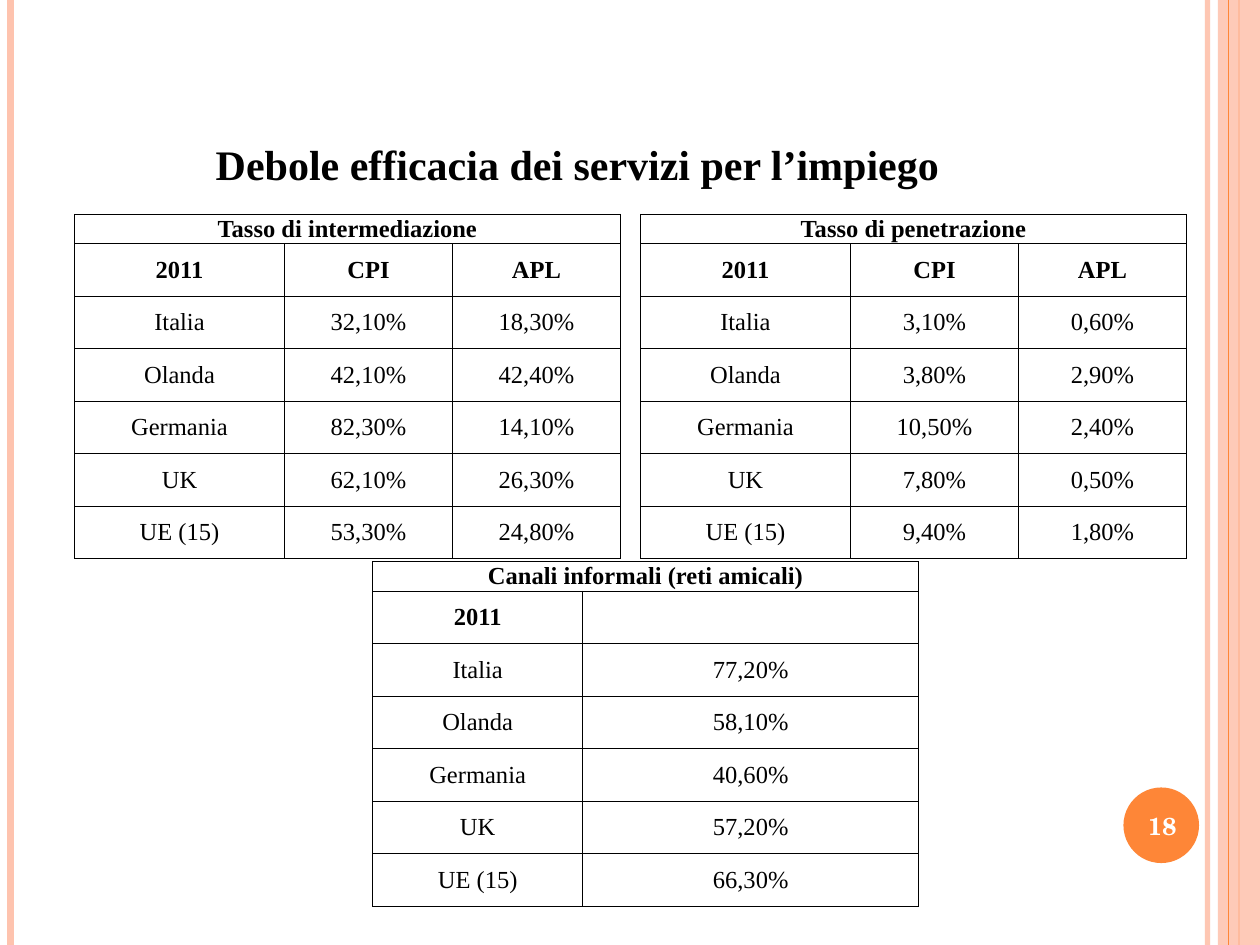
from dataclasses import dataclass

from lxml import etree
from pptx import Presentation
from pptx.dml.color import RGBColor
from pptx.enum.shapes import MSO_CONNECTOR, MSO_SHAPE
from pptx.enum.text import MSO_ANCHOR, PP_ALIGN
from pptx.oxml.ns import qn
from pptx.util import Emu, Pt

STRAIGHT = MSO_CONNECTOR.STRAIGHT
RECTANGLE, OVAL = MSO_SHAPE.RECTANGLE, MSO_SHAPE.OVAL
CENTER = PP_ALIGN.CENTER
MIDDLE, BOTTOM = MSO_ANCHOR.MIDDLE, MSO_ANCHOR.BOTTOM

EMU_PER_PX = 7620  # 120 px to the inch
SLIDE_W, SLIDE_H = 1200, 900
CAPTION_H, ROW_H = 26, 50


@dataclass(frozen=True)
class Theme:
    orange: str = "FE8637"
    peach: str = "FEC3AE"
    ink: str = "000000"
    white: str = "FFFFFF"
    body_font: str = "Times New Roman"
    number_font: str = "TeX Gyre Schola"
    title_size: int = 24
    text_size: int = 14
    border: float = 0.5


THEME = Theme()

COUNTRIES = ["Italia", "Olanda", "Germania", "UK", "UE (15)"]
SERVICES = ["CPI", "APL"]

# caption, left, top, column widths, column headings, values by country
RATES = [
    ("Tasso di intermediazione", 71, 204, [200, 160, 160], SERVICES,
     [("32,10%", "18,30%"), ("42,10%", "42,40%"), ("82,30%", "14,10%"),
      ("62,10%", "26,30%"), ("53,30%", "24,80%")]),
    ("Tasso di penetrazione", 610, 204, [200, 160, 160], SERVICES,
     [("3,10%", "0,60%"), ("3,80%", "2,90%"), ("10,50%", "2,40%"),
      ("7,80%", "0,50%"), ("9,40%", "1,80%")]),
    ("Canali informali (reti amicali)", 355, 535, [200, 320], [""],
     [("77,20%",), ("58,10%",), ("40,60%",), ("57,20%",), ("66,30%",)]),
]


def px(length):
    return Emu(length * EMU_PER_PX)


def rgb(color):
    return RGBColor.from_string(color)


def set_opacity(fill_owner, percent):
    for color in fill_owner.iter(qn("a:srgbClr")):
        etree.SubElement(color, qn("a:alpha"), val=str(percent * 1000))


def style_text(frame, text, size, color, bold, font=THEME.body_font):
    paragraph = frame.paragraphs[0]
    paragraph.text = text
    paragraph.alignment = CENTER
    paragraph.font.name = font
    paragraph.font.size = Pt(size)
    paragraph.font.bold = bold
    paragraph.font.color.rgb = rgb(color)


def add_stripe(slide, x, color, weight, opacity=100):
    stripe = slide.shapes.add_connector(STRAIGHT, px(x), 0, px(x), px(SLIDE_H))
    stripe.line.color.rgb = rgb(color)
    stripe.line.width = Pt(weight)
    properties = stripe._element.spPr
    if opacity < 100:
        set_opacity(properties, opacity)
    etree.SubElement(properties, qn("a:effectLst"))


def add_plain_shape(slide, kind, left, top, width, height, color, opacity=100):
    shape = slide.shapes.add_shape(kind, px(left), px(top), px(width), px(height))
    shape.shadow.inherit = False
    shape.fill.solid()
    shape.fill.fore_color.rgb = rgb(color)
    shape.line.fill.background()
    if opacity < 100:
        set_opacity(shape._element.spPr, opacity)


def add_frame(slide):
    add_stripe(slide, 1150, THEME.peach, 3, 93)
    add_stripe(slide, 10, THEME.peach, 4.5)
    add_stripe(slide, 1180, THEME.orange, 1.5)
    add_plain_shape(slide, RECTANGLE, 1160, 0, 40, SLIDE_H, THEME.peach, 87)
    add_stripe(slide, 1170, THEME.orange, 0.75)
    add_plain_shape(slide, OVAL, 1070, 750, 72, 72, THEME.orange)


def place_title(slide, text):
    title = slide.shapes.title
    title.left, title.top, title.width, title.height = px(60), px(36), px(980), px(150)
    title.text_frame.vertical_anchor = BOTTOM
    style_text(title.text_frame, text, THEME.title_size, THEME.ink, True)
    # Bring the title in front of the frame
    slide.shapes._spTree.append(title._element)


def add_page_number(slide, number):
    box = slide.shapes.add_textbox(px(1067), px(752), px(80), px(68))
    box.text_frame.word_wrap = True
    box.text_frame.vertical_anchor = MIDDLE
    style_text(box.text_frame, number, THEME.text_size, THEME.white, True,
               THEME.number_font)


def add_borders(cell):
    properties = cell._tc.get_or_add_tcPr()
    for side in ("lnL", "lnR", "lnT", "lnB"):
        edge = etree.SubElement(properties, qn(f"a:{side}"), w=str(Pt(THEME.border)))
        fill = etree.SubElement(edge, qn("a:solidFill"))
        etree.SubElement(fill, qn("a:srgbClr"), val=THEME.ink)


def format_cell(cell, text, bold):
    cell.margin_left = cell.margin_right = cell.margin_top = cell.margin_bottom = 0
    cell.vertical_anchor = MIDDLE
    add_borders(cell)
    cell.fill.background()
    style_text(cell.text_frame, text, THEME.text_size, THEME.ink, bold)


def add_rate_table(slide, caption, left, top, widths, headings, values):
    lines = [[caption] + [""] * len(headings), ["2011", *headings]]
    lines += [[country, *rates] for country, rates in zip(COUNTRIES, values)]
    heights = [CAPTION_H] + [ROW_H] * (len(lines) - 1)
    table = slide.shapes.add_table(len(lines), len(widths), px(left), px(top),
                                   px(sum(widths)), px(sum(heights))).table
    table.first_row = table.horz_banding = False
    for column, width in zip(table.columns, widths):
        column.width = px(width)
    for row, height in zip(table.rows, heights):
        row.height = px(height)
    for r, line in enumerate(lines):
        for c, text in enumerate(line):
            format_cell(table.cell(r, c), text, bold=r < 2)
    # The caption spans the table
    table.cell(0, 0).merge(table.cell(0, len(widths) - 1))


def main():
    deck = Presentation()
    deck.slide_width, deck.slide_height = px(SLIDE_W), px(SLIDE_H)
    slide = deck.slides.add_slide(deck.slide_layouts[5])
    add_frame(slide)
    place_title(slide, "Debole efficacia dei servizi per l’impiego")
    add_page_number(slide, "18")
    for rate in RATES:
        add_rate_table(slide, *rate)
    deck.save("out.pptx")


if __name__ == "__main__":
    main()
